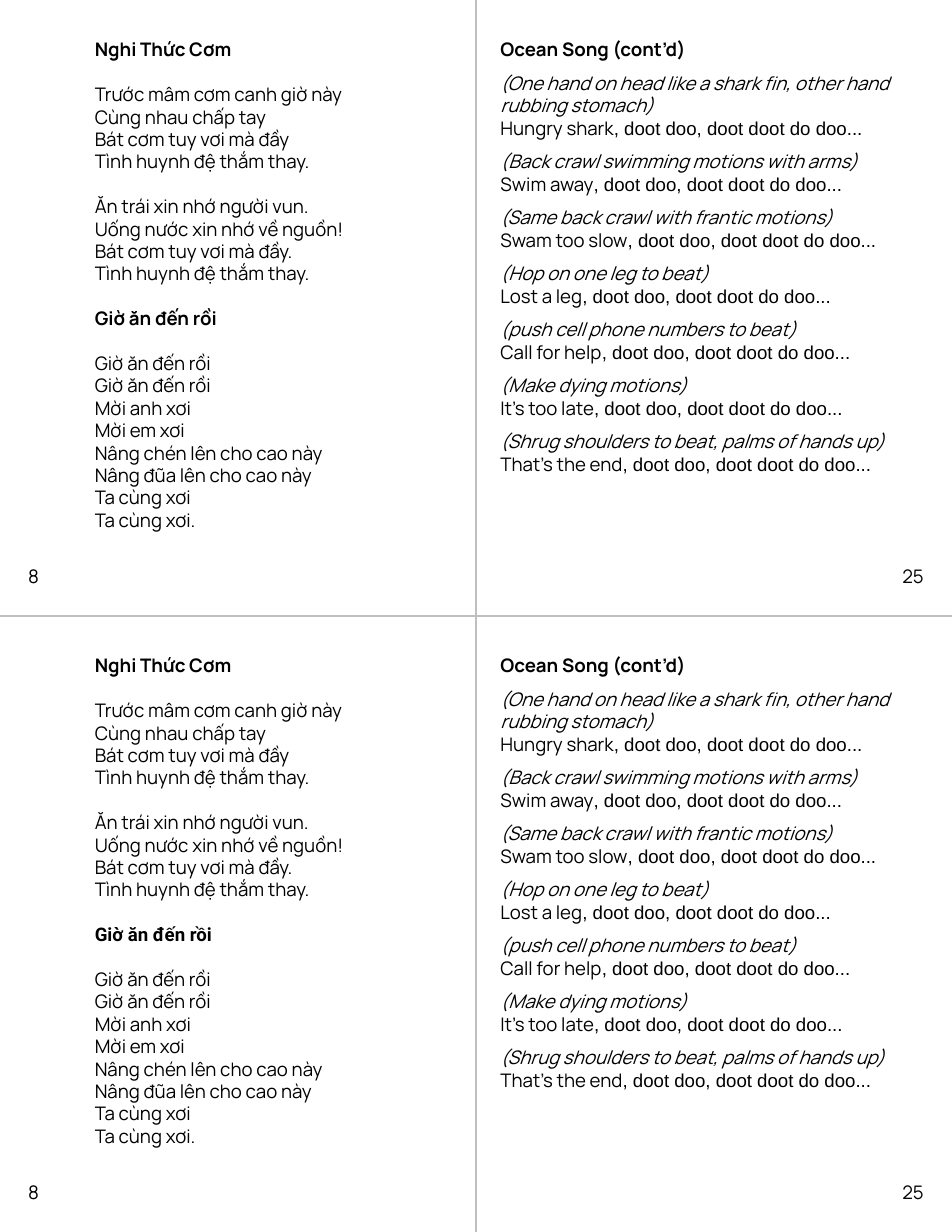
from pptx import Presentation
from pptx.dml.color import RGBColor
from pptx.enum.shapes import MSO_CONNECTOR as Conn
from pptx.enum.text import MSO_ANCHOR as Anchor, PP_ALIGN as Align
from pptx.oxml.ns import qn
from pptx.util import Cm, Pt
from lxml.etree import SubElement

# Content: each verse is a list of lines
GRACE = ("Nghi Thức Cơm", [
    ["Trước mâm cơm canh giờ này", "Cùng nhau chấp tay",
     "Bát cơm tuy vơi mà đầy", "Tình huynh đệ thắm thay."],
    ["Ăn trái xin nhớ người vun.", "Uống nước xin nhớ về nguồn!",
     "Bát cơm tuy vơi mà đầy.", "Tình huynh đệ thắm thay."],
])
MEAL = ("Giờ ăn đến rồi", [
    ["Giờ ăn đến rồi", "Giờ ăn đến rồi", "Mời anh xơi", "Mời em xơi",
     "Nâng chén lên cho cao này", "Nâng đũa lên cho cao này",
     "Ta cùng xơi", "Ta cùng xơi."],
])
CHANT = "Ocean Song (cont’d)"
REFRAIN = ", doot doo, doot doot do doo..."
MOVES = [  # (motion lines, sung words)
    (["(One hand on head like a shark fin, other hand", "rubbing stomach)"],
     "Hungry shark"),
    (["(Back crawl swimming motions with arms)"], "Swim away"),
    (["(Same back crawl with frantic motions)"], "Swam too slow"),
    (["(Hop on one leg to beat)"], "Lost a leg"),
    (["(push cell phone numbers to beat)"], "Call for help"),
    (["(Make dying motions)"], "It’s too late"),
    (["(Shrug shoulders to beat, palms of hands up)"], "That’s the end"),
]
PAGES = ("8", "25")
HEADS = ("Manrope", "Roboto")  # font of the second song's heading, per half

# Sheet measures in cm
WIDE, HIGH = 21.59, 27.94
HALF = HIGH / 2
TOP, SONG_W = 0.62, 10.19
LEFT_X, RIGHT_X = 1.9, 11.1
EDGE, NUM_W, NUM_H = 0.64, 1.27, 0.66
GAP, SMALL = 14.4, 7.2  # space before a verse, in points

deck = Presentation()
deck.slide_width, deck.slide_height = Cm(WIDE), Cm(HIGH)
slide = deck.slides.add_slide(deck.slide_layouts[6])


def color(code):
    return RGBColor.from_string(code)


def rule(x1, y1, x2, y2):
    line = slide.shapes.add_connector(
        Conn.STRAIGHT, Cm(x1), Cm(y1), Cm(x2), Cm(y2))
    line.line.color.rgb = color("BFBFBF")
    line.line.width = Pt(0.75)
    SubElement(line._element.spPr, qn("a:effectLst"))


def box(x, y, wide, high, inset):
    frame = slide.shapes.add_textbox(
        Cm(x), Cm(y), Cm(wide), Cm(high)).text_frame
    frame.word_wrap = True
    frame.margin_left = frame.margin_right = Cm(inset)
    frame.margin_top = frame.margin_bottom = Cm(inset)
    return frame


def style(run, face="Manrope", bold=False, italic=False):
    font = run.font
    font.name, font.size = face, Pt(12)
    font.bold, font.italic = bold, italic
    font.color.rgb = color("000000")


def write(frame, text, gap=0, **look):
    first = frame.paragraphs[0]
    para = frame.add_paragraph() if first.runs else first
    para.text = text
    if gap:
        para.space_before = Pt(gap)
    style(para.runs[0], **look)
    return para


def song(frame, title, verses, face, gap):
    write(frame, title, gap, face=face, bold=True)
    for verse in verses:
        for i, text in enumerate(verse):
            write(frame, text, 0 if i else GAP)


def chant(frame):
    write(frame, CHANT, bold=True)
    for motion, words in MOVES:
        for i, text in enumerate(motion):
            write(frame, text, 0 if i else SMALL, italic=True)
        tail = write(frame, words).add_run()
        tail.text = REFRAIN
        style(tail, "Arial")


# Cutting lines
rule(WIDE / 2, 0, WIDE / 2, HIGH)
rule(0, HALF, WIDE, HALF)

# The same two pages in the upper and lower half
for half, face in enumerate(HEADS):
    y = half * HALF

    # Page numbers
    spots = ((EDGE, Align.LEFT), (WIDE - EDGE - NUM_W, Align.RIGHT))
    for number, (x, side) in zip(PAGES, spots):
        frame = box(x, y + HALF - EDGE - NUM_H, NUM_W, NUM_H, 0)
        frame.vertical_anchor = Anchor.BOTTOM
        write(frame, number).alignment = side

    # Songs
    left = box(LEFT_X, y + TOP, SONG_W, 10.13, 0.25)
    song(left, *GRACE, "Manrope", 0)
    song(left, *MEAL, face, GAP)
    chant(box(RIGHT_X, y + TOP, SONG_W, 11.4, 0.25))

deck.save("out.pptx")
